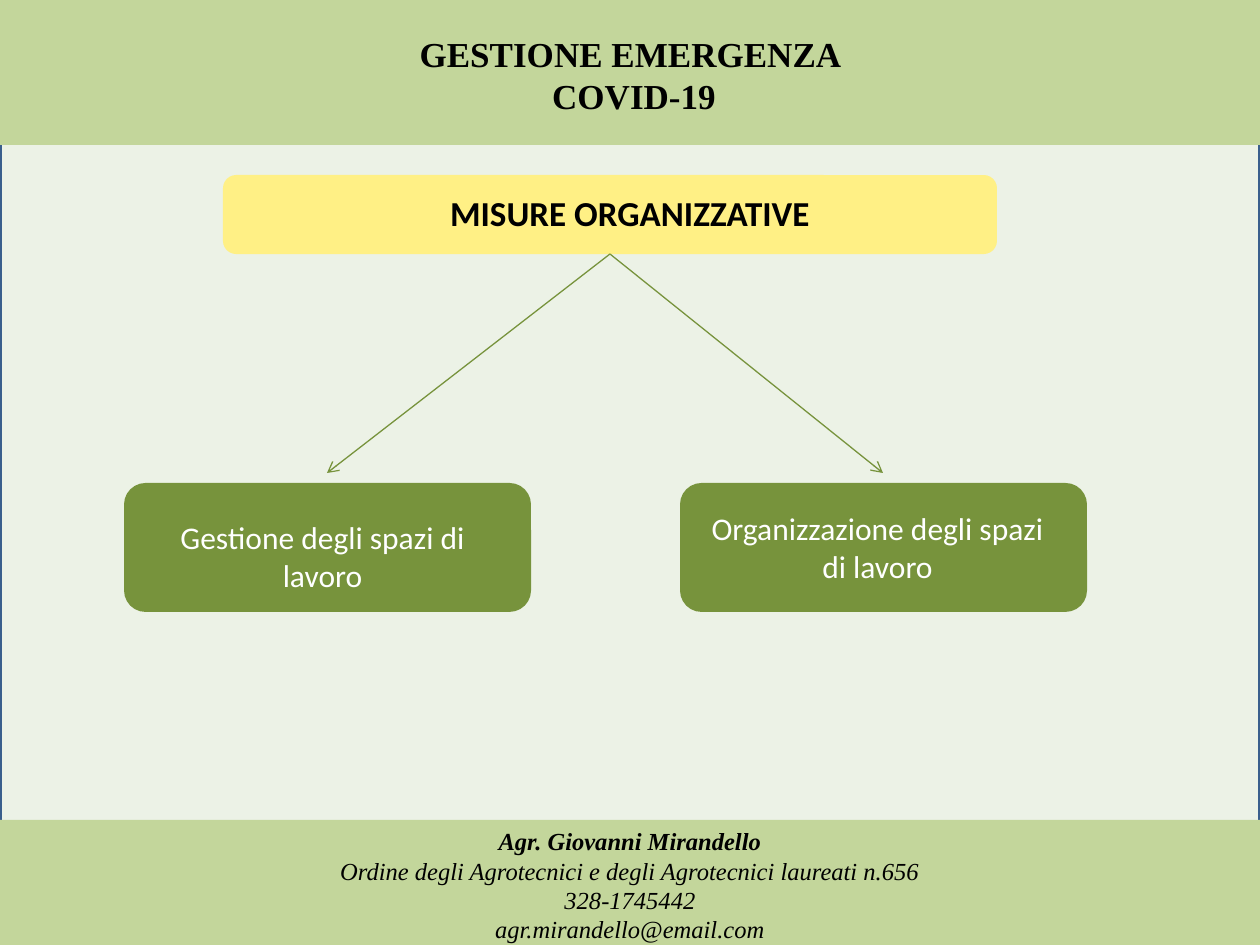
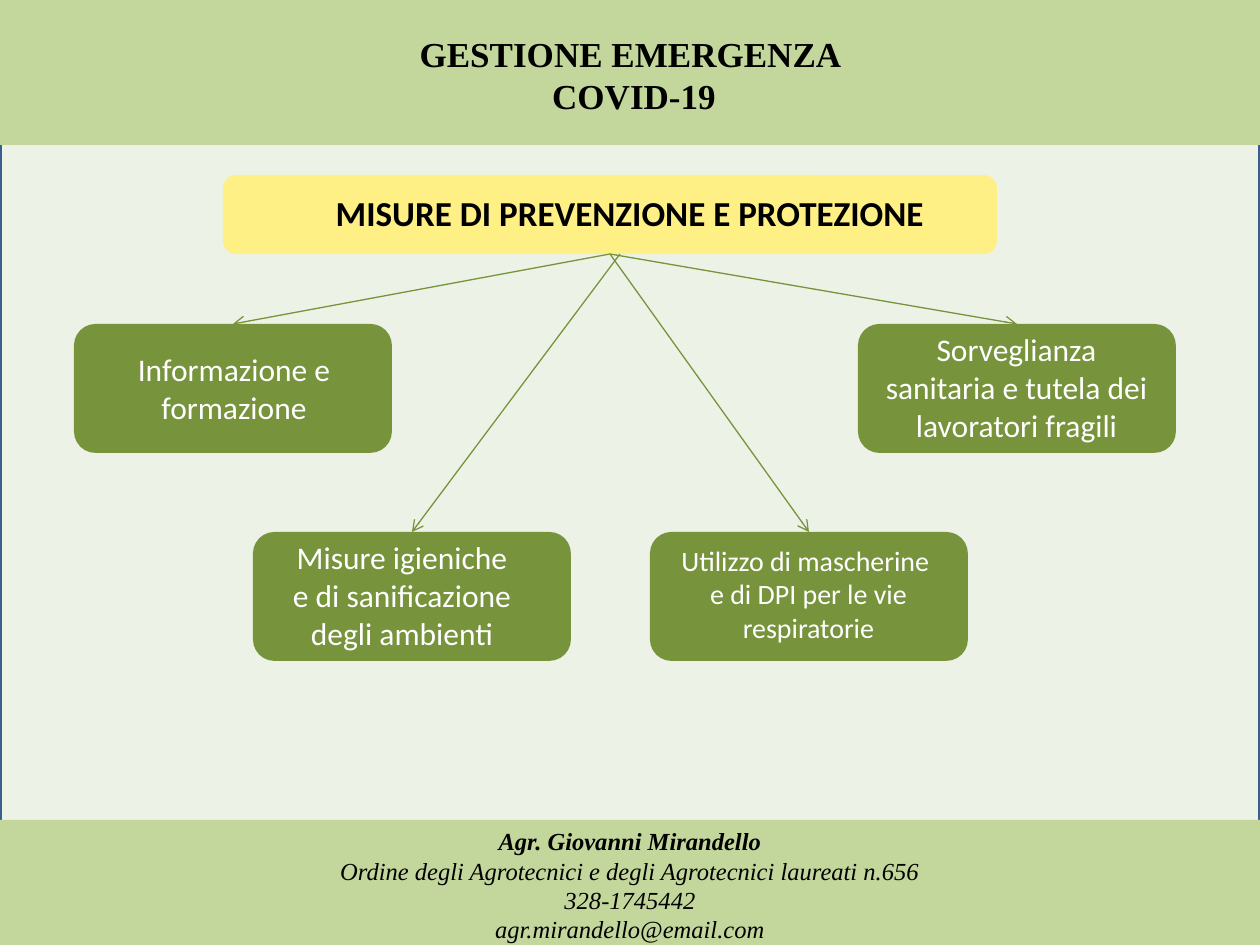
"""Build two slides on organisational and preventive measures for COVID-19."""
from lxml import etree
from pptx import Presentation
from pptx import util as u
from pptx.dml.color import RGBColor
from pptx.enum import shapes, text
from pptx.oxml.ns import qn

SCALE = 914400 / 126
W, H = 1260, 945
COLORS = {
    "body": "ECF2E6", "frame": "3A5F8C", "band": "C3D69B", "heading": "FFF085",
    "box": "77933C", "dark": "000000", "light": "FFFFFF",
}
TITLE = {"name": "Times New Roman", "size": u.Pt(20), "bold": True}
CONTACT = {"name": "Times New Roman", "size": u.Pt(14), "bold": False, "italic": True}
HEADING = {"name": "Calibri", "size": u.Pt(20), "bold": True}
LABEL = {"name": "Calibri", "size": u.Pt(18)}
SMALL_LABEL = {**LABEL, "size": u.Pt(16)}
BOX_H = 129
HUB = (610, 254)


def px(*values):
    """Turn px lengths into EMU."""
    return [u.Emu(round(v * SCALE)) for v in values]


def rgb(key):
    """Look up a palette colour."""
    return RGBColor.from_string(COLORS[key])


def add_block(s, at, fill, rounded=False, line=None):
    """Draw a filled rectangle, optionally rounded or outlined."""
    kind = shapes.MSO_SHAPE.ROUNDED_RECTANGLE if rounded else shapes.MSO_SHAPE.RECTANGLE
    sp = s.shapes.add_shape(kind, *px(*at))
    sp.shadow.inherit = False
    sp.fill.solid()
    sp.fill.fore_color.rgb = rgb(fill)
    if line:
        sp.line.color.rgb = rgb(line)
        sp.line.width = u.Pt(2)
    else:
        sp.line.fill.background()


def add_text(s, at, lines, style, color="dark", first=None):
    """Write centred paragraphs; first overrides the style of the first one."""
    tf = s.shapes.add_textbox(*px(*at)).text_frame
    tf.word_wrap = True
    tf.auto_size = text.MSO_AUTO_SIZE.SHAPE_TO_FIT_TEXT
    for i, line in enumerate(lines):
        p = tf.add_paragraph() if i else tf.paragraphs[0]
        p.alignment = text.PP_ALIGN.CENTER
        r = p.add_run()
        r.text = line
        r.font.color.rgb = rgb(color)
        for name, value in {**style, **({} if i else first or {})}.items():
            setattr(r.font, name, value)


def add_arrow(s, start, end):
    """Draw a thin green arrow."""
    c = s.shapes.add_connector(shapes.MSO_CONNECTOR.STRAIGHT, *px(*start, *end))
    c.line.color.rgb = rgb("box")
    c.line.width = u.Pt(0.75)
    etree.SubElement(c.line._get_or_add_ln(), qn("a:tailEnd"), type="arrow")
    etree.SubElement(c._element.spPr, qn("a:effectLst"))


def add_branch(s, box, label, lines, style=LABEL, start=HUB, gap=0):
    """Draw a green box, its label and the arrow that leads to it."""
    x, y, w = box
    add_block(s, (x, y, w, BOX_H), "box", rounded=True)
    add_arrow(s, start, (x + w // 2, y - gap))
    add_text(s, label, lines, style, "light")


def add_base(prs, heading):
    """Add a slide with the shared bands, title, contact and heading."""
    s = prs.slides.add_slide(prs.slide_layouts[6])
    add_block(s, (0, 125, W, 724), "body", line="frame")
    add_block(s, (223, 175, 774, 79), "heading", rounded=True)
    add_block(s, (0, 0, W, 145), "band")
    add_block(s, (0, 820, W, 125), "band")
    add_text(s, (292, 26, 684, 100), ["GESTIONE EMERGENZA ", "COVID-19"], TITLE)
    add_text(s, (0, 820, W, 131), [
        "Agr. Giovanni Mirandello",
        "Ordine degli Agrotecnici e degli Agrotecnici laureati n.656",
        "328-1745442",
        "agr.mirandello@email.com",
    ], CONTACT, first={"bold": True})
    add_text(s, (0, 185, W, 55), [heading], HEADING)
    return s


def add_organisation(prs):
    """Build the slide on organisational measures."""
    s = add_base(prs, "MISURE ORGANIZZATIVE")
    add_branch(s, (124, 483, 407), (144, 512, 357, 89),
               ["Gestione degli spazi di lavoro"], gap=10)
    add_branch(s, (680, 483, 407), (699, 503, 357, 89),
               ["Organizzazione degli spazi di lavoro"], gap=10)


def add_prevention(prs):
    """Build the slide on prevention and protection measures."""
    s = add_base(prs, "MISURE DI PREVENZIONE E PROTEZIONE")
    upper, lower, w = 324, 532, 318
    add_branch(s, (74, upper, w), (105, 344, 258, 89), ["Informazione e formazione"])
    add_branch(s, (253, lower, w), (273, lower, 258, 127),
               ["Misure igieniche e di sanificazione degli ambienti"], start=(620, 254))
    add_branch(s, (650, lower, w), (660, 537, 297, 115),
               ["Utilizzo di mascherine ", "e di DPI per le vie respiratorie"], SMALL_LABEL)
    add_branch(s, (858, upper, w), (868, upper, 297, 127),
               ["Sorveglianza sanitaria e tutela dei lavoratori fragili"])


def main():
    """Create and save the presentation."""
    prs = Presentation()
    prs.slide_width, prs.slide_height = px(W, H)
    add_organisation(prs)
    add_prevention(prs)
    prs.save("out.pptx")


if __name__ == "__main__":
    main()
